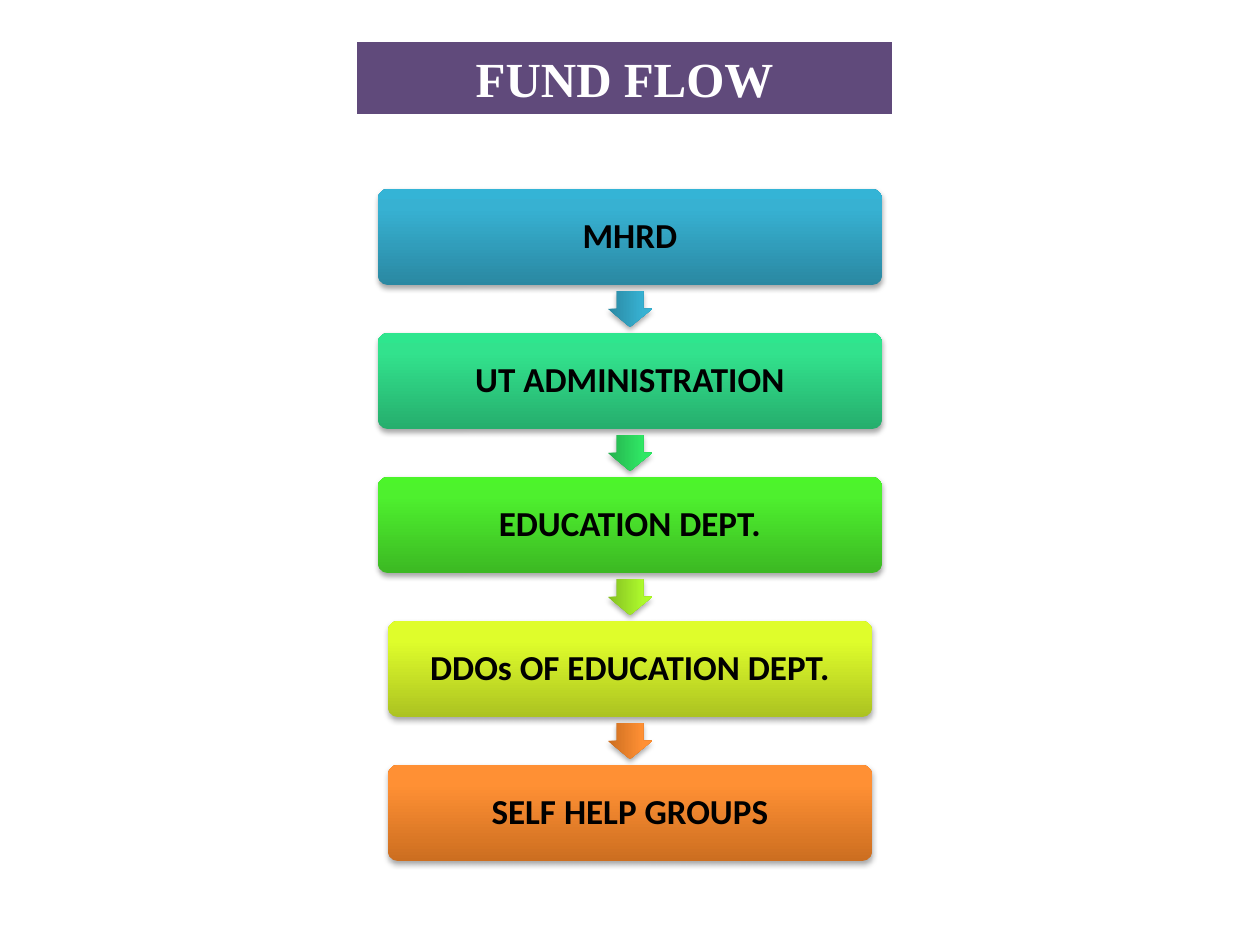
from copy import deepcopy

from lxml import etree
from pptx import Presentation
from pptx import util as u
from pptx.dml.color import RGBColor
from pptx.enum import shapes, text
from pptx.oxml import ns

PX = u.Inches(1) / 126
CENTER, TOP, PITCH = 630, 189, 144
BOX_HEIGHT = 96
ARROW_LENGTH, ARROW_BREADTH = 36, 44

BLUE = ("2A88A2", "37B1D2", "34B4D6")
ORANGE = ("CC6E20", "FF9034", "FF9136")
# label, box width, box gradient, gradient of the arrow below
STEPS = [
    ("MHRD", 504, BLUE, BLUE),
    ("UT ADMINISTRATION", 504, ("26AE6D", "32E28D", "2EE68E"), ("25B24E", "30E765", "2DEB64")),
    ("EDUCATION DEPT.", 504, ("3CB923", "4EF02E", "4CF52A"), ("85C022", "ADF92C", "AFFE28")),
    ("DDOs OF EDUCATION DEPT.", 484, ("ACC321", "DFFD2B", "E1FF2B"), ORANGE),
    ("SELF HELP GROUPS", 484, ORANGE, None),
]
SHADOW = f"""<a:outerShdw xmlns:a="{ns.nsuri('a')}" blurRad="40000" dist="23000"
 dir="5400000" rotWithShape="0"><a:srgbClr val="000000"><a:alpha val="35000"/></a:srgbClr></a:outerShdw>"""


def add_block(kind, left, top, width, height, colors):
    """Add a borderless shape: one colour is a flat fill, three a shadowed gradient."""
    shape = slide.shapes.add_shape(kind, *(round(n * PX) for n in (left, top, width, height)))
    shape.line.fill.background()
    shape.shadow.inherit = False
    if len(colors) == 1:
        shape.fill.solid()
        shape.fill.fore_color.rgb = RGBColor.from_string(colors[0])
        return shape
    shape.fill.gradient()
    shape.fill.gradient_angle = 90
    properties = shape.element.spPr
    stop_list = properties.find(f".//{ns.qn('a:gsLst')}")
    stop_list.append(deepcopy(stop_list[-1]))
    for stop, position, color in zip(shape.fill.gradient_stops, (0, 0.8, 1), colors):
        stop.position = position
        stop.color.rgb = RGBColor.from_string(color)
    properties.find(ns.qn("a:effectLst")).append(etree.fromstring(SHADOW))
    return shape


def add_label(shape, label, font_name, size, color):
    """Write one bold centred line in the shape."""
    shape.text_frame.vertical_anchor = text.MSO_ANCHOR.MIDDLE
    paragraph = shape.text_frame.paragraphs[0]
    paragraph.alignment = text.PP_ALIGN.CENTER
    run = paragraph.add_run()
    run.text = label
    run.font.name = font_name
    run.font.size = u.Pt(size)
    run.font.bold = True
    run.font.color.rgb = RGBColor.from_string(color)
    return paragraph


presentation = Presentation()
presentation.slide_width = u.Inches(10)
presentation.slide_height = u.Inches(7.5)
slide = presentation.slides.add_slide(presentation.slide_layouts[6])

title = add_block(shapes.MSO_SHAPE.RECTANGLE, 357, 42, 535, 72, ["604A7B"])
add_label(title, "FUND FLOW", "Times New Roman", 28, "FFFFFF")

for index, (label, width, box_colors, arrow_colors) in enumerate(STEPS):
    top = TOP + index * PITCH
    box = add_block(shapes.MSO_SHAPE.ROUNDED_RECTANGLE, CENTER - width / 2, top,
                    width, BOX_HEIGHT, box_colors)
    box.adjustments[0] = 0.1
    paragraph = add_label(box, label, "Calibri", 20, "000000")
    paragraph.line_spacing = 0.9
    paragraph.space_after = u.Pt(7)
    if arrow_colors:
        middle = top + (BOX_HEIGHT + PITCH) / 2
        arrow = add_block(shapes.MSO_SHAPE.RIGHT_ARROW, CENTER - ARROW_LENGTH / 2,
                          middle - ARROW_BREADTH / 2, ARROW_LENGTH, ARROW_BREADTH, arrow_colors)
        arrow.rotation = 90
        arrow.adjustments[0] = 0.6
        arrow.adjustments[1] = 0.5

presentation.save("out.pptx")
